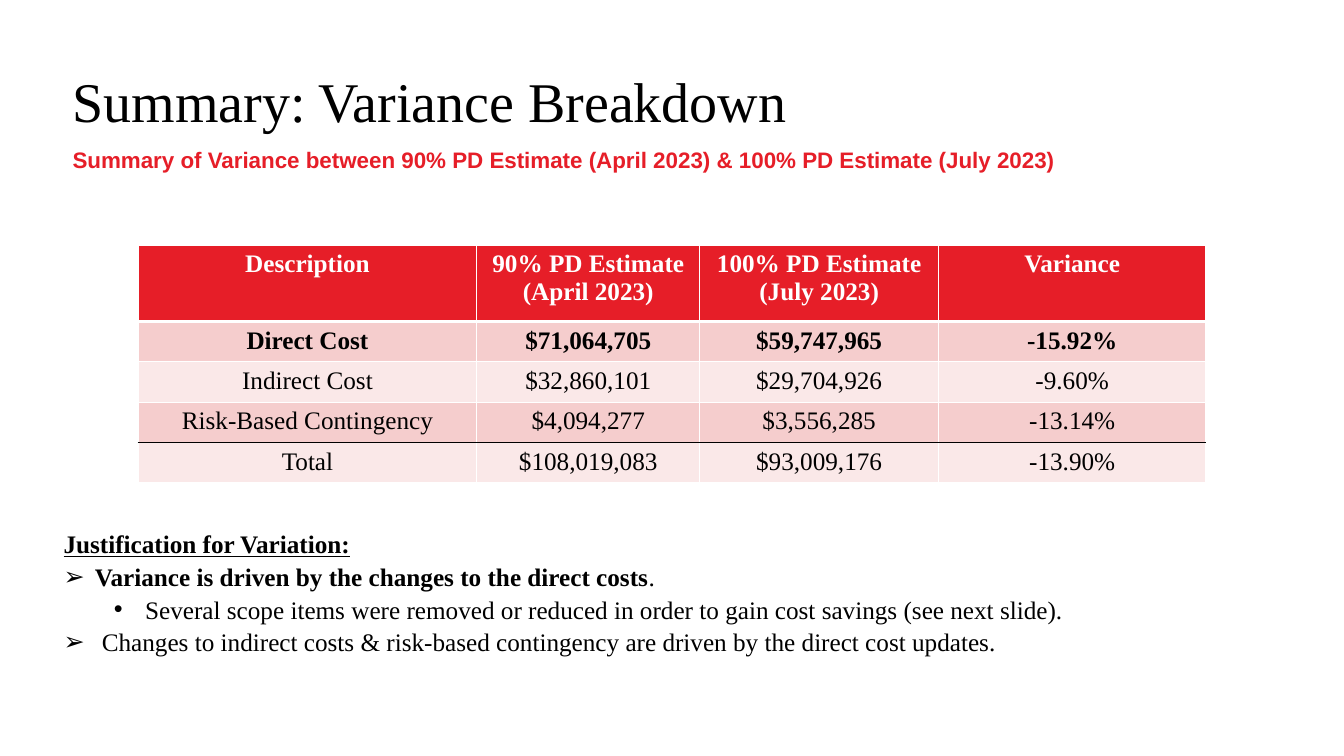
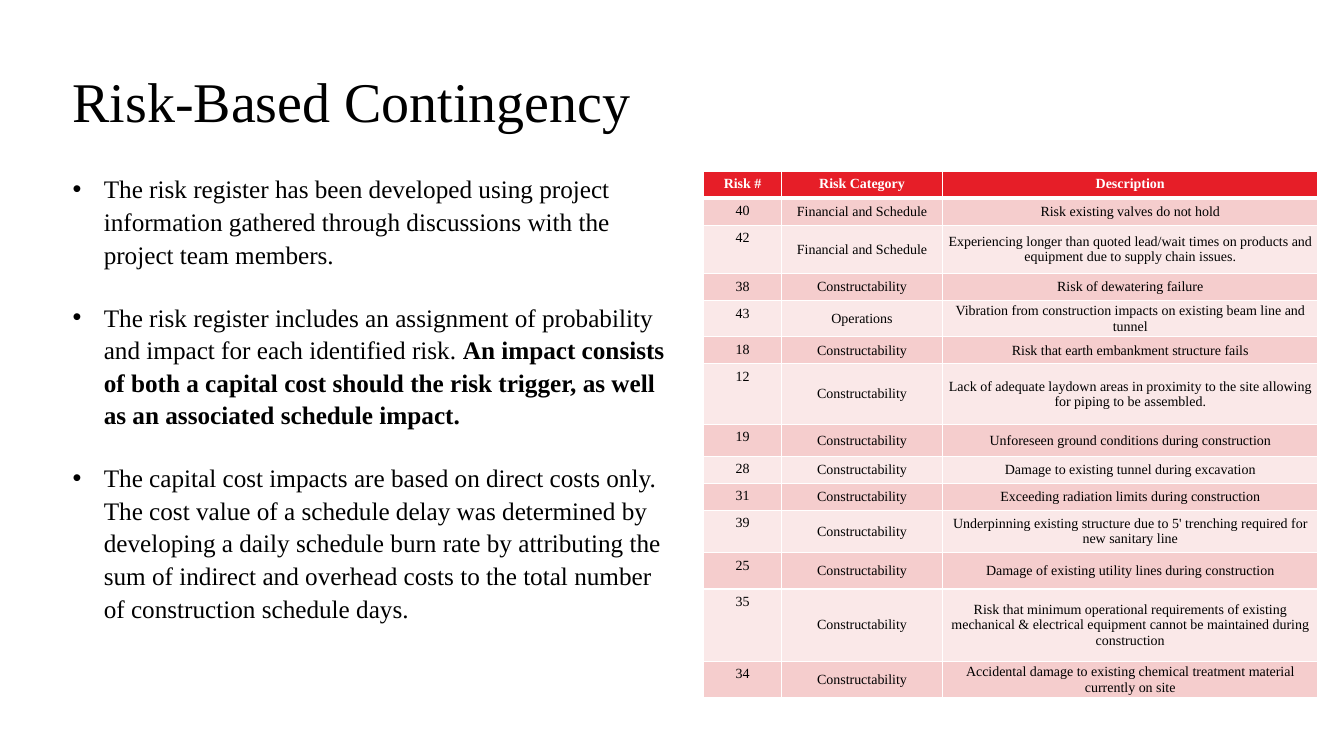
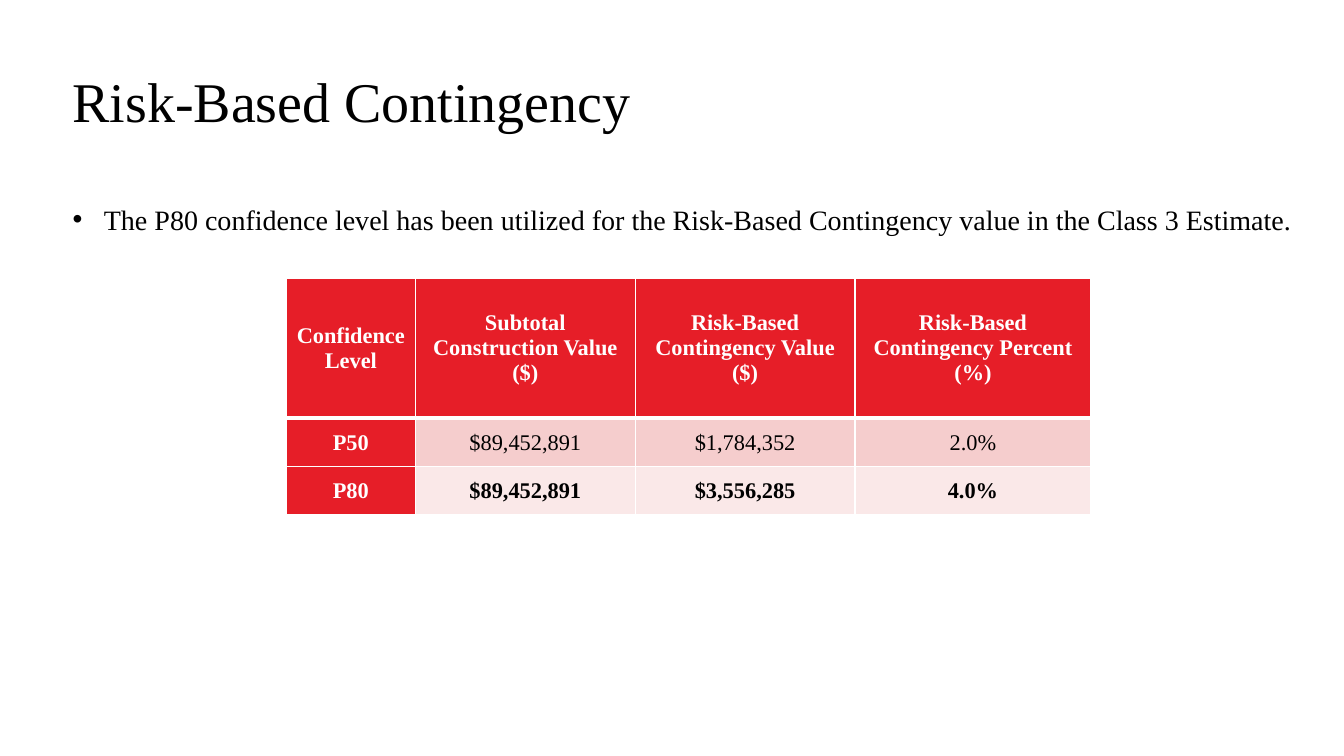
from lxml import etree
from pptx import Presentation
from pptx.dml.color import RGBColor
from pptx.enum.text import MSO_ANCHOR, MSO_AUTO_SIZE, PP_ALIGN
from pptx.oxml.ns import qn
from pptx.util import Pt

PX = 9144  # 100 px to the inch
SERIF, SANS = "Times New Roman", "Arial"
RED, PINK, PALE, WHITE, BLACK = "E61E28", "F5CDCD", "FAE8E8", "FFFFFF", "000000"
LEFT, CENTER = PP_ALIGN.LEFT, PP_ALIGN.CENTER
TOP, MIDDLE = MSO_ANCHOR.TOP, MSO_ANCHOR.MIDDLE
NO_AUTOFIT = MSO_AUTO_SIZE.NONE
TITLES = ["Summary: Variance Breakdown", "Risk-Based Contingency", "Risk-Based Contingency"]
color = RGBColor.from_string


def add_text(slide, box, paragraphs, size, gap=0):
    """Each paragraph is (runs, bullet, text start, hanging indent); a run is (text, bold)."""
    shape = slide.shapes.add_textbox(*[n * PX for n in box])
    frame = shape.text_frame
    frame.word_wrap = True
    frame.margin_left = frame.margin_top = frame.margin_right = frame.margin_bottom = 0
    for index, (runs, bullet, start, hanging) in enumerate(paragraphs):
        paragraph = frame.paragraphs[0] if index == 0 else frame.add_paragraph()
        if bullet:
            properties = paragraph._p.get_or_add_pPr()
            properties.set("marL", str(start * PX))
            properties.set("indent", str(-hanging * PX))
            etree.SubElement(properties, qn("a:buFont"), typeface=SANS)
            etree.SubElement(properties, qn("a:buChar"), char=bullet)
        paragraph.line_spacing = 1.08
        if index and gap:
            paragraph.space_before = Pt(gap)
        paragraph.font.name = SERIF
        paragraph.font.size = Pt(size)
        paragraph.font.color.rgb = color(BLACK)
        for text, bold in runs:
            run = paragraph.add_run()
            run.text = text
            run.font.bold = bold
    return frame


def add_table(slide, left, top, widths, heights, rows, size,
              bold_row=0, header_column=False, ruled_row=None):
    """Add a red-headed banded table; a black line runs above ruled_row."""
    frame = slide.shapes.add_table(len(rows), len(widths), left * PX, top * PX,
                                   sum(widths) * PX, sum(heights) * PX)
    table = frame.table
    for column, width in zip(table.columns, widths):
        column.width = width * PX
    for r, (values, height) in enumerate(zip(rows, heights)):
        table.rows[r].height = height * PX
        top_line = (BLACK if r == ruled_row else WHITE, 3 if r == 1 else 1)
        bottom_line = (BLACK if r + 1 == ruled_row else WHITE, 3 if r == 0 else 1)
        lines = {"a:lnL": (WHITE, 1), "a:lnR": (WHITE, 1),
                 "a:lnT": top_line, "a:lnB": bottom_line}
        for c, value in enumerate(values):
            cell = table.cell(r, c)
            is_header = r == 0 or (header_column and c == 0)
            cell.fill.solid()
            cell.fill.fore_color.rgb = color(RED if is_header else PINK if r % 2 else PALE)
            properties = cell._tc.get_or_add_tcPr()
            for position, (tag, (line_color, points)) in enumerate(lines.items()):
                line = etree.Element(qn(tag), w=str(Pt(points)))
                fill = etree.SubElement(line, qn("a:solidFill"))
                etree.SubElement(fill, qn("a:srgbClr"), val=line_color)
                properties.insert(position, line)
            cell.text_frame.text = value
            for paragraph in cell.text_frame.paragraphs:
                paragraph.alignment = CENTER
                paragraph.font.name = SERIF
                paragraph.font.size = Pt(size)
                paragraph.font.bold = is_header or r == bold_row
                paragraph.font.color.rgb = color(WHITE if is_header else BLACK)
    return table


presentation = Presentation()
presentation.slide_width = 1333 * PX
presentation.slide_height = 750 * PX

slides = []
for text in TITLES:
    slide = presentation.slides.add_slide(presentation.slide_layouts[5])
    title = slide.shapes.title
    title.left, title.top, title.width, title.height = [n * PX for n in (72, 72, 987, 58)]
    frame = title.text_frame
    frame.text = text
    frame.auto_size = NO_AUTOFIT
    frame.vertical_anchor = TOP
    frame.margin_left = frame.margin_top = frame.margin_right = frame.margin_bottom = 0
    paragraph = frame.paragraphs[0]
    paragraph.alignment = LEFT
    paragraph.line_spacing = Pt(44)
    paragraph.font.name = SERIF
    paragraph.font.size = Pt(40)
    paragraph.font.color.rgb = color(BLACK)
    slides.append(slide)
variance_slide, register_slide, confidence_slide = slides

# Variance breakdown
subtitle = add_text(variance_slide, (72, 143, 999, 33), [
    ([("Summary of Variance between 90% PD Estimate (April 2023) & 100% PD Estimate (July 2023)",
       True)], None, 0, 0),
], 16)
subtitle.paragraphs[0].font.name = SANS
subtitle.paragraphs[0].font.color.rgb = color(RED)

justification = add_text(variance_slide, (63, 522, 1199, 151), [
    ([("Justification for Variation:", True)], None, 0, 0),
    ([("Variance is driven by the changes to the direct costs", True), (".", False)],
     "➢", 31, 31),
    ([("Several scope items were removed or reduced in order to gain cost savings "
       "(see next slide).", False)], "•", 81, 31),
    ([("Changes to indirect costs & risk-based contingency are driven by the direct "
       "cost updates.", False)], "➢", 38, 38),
], 18)
justification.paragraphs[0].font.underline = True

add_table(variance_slide, 137, 243, [336, 221, 237, 265], [76] + [40] * 4, [
    ["Description", "90% PD Estimate\v(April 2023)", "100% PD Estimate\v(July 2023)", "Variance"],
    ["Direct Cost", "$71,064,705", "$59,747,965", "-15.92%"],
    ["Indirect Cost", "$32,860,101", "$29,704,926", "-9.60%"],
    ["Risk-Based Contingency", "$4,094,277", "$3,556,285", "-13.14%"],
    ["Total", "$108,019,083", "$93,009,176", "-13.90%"],
], 18, bold_row=1, ruled_row=4)

# Risk register
add_text(register_slide, (72, 170, 596, 476), [
    ([("The risk register has been developed using project information gathered through "
       "discussions with the project team members.", False)], "•", 31, 31),
    ([("The risk register includes an assignment of probability and impact for each "
       "identified risk. ", False),
      ("An impact consists of both a capital cost should the risk trigger, as well as an "
       "associated schedule impact.", True)], "•", 31, 31),
    ([("The capital cost impacts are based on direct costs only. The cost value of a schedule "
       "delay was determined by developing a daily schedule burn rate by attributing the sum of "
       "indirect and overhead costs to the total number of construction schedule days.",
       False)], "•", 31, 31),
], 18, gap=21.6)

FINANCIAL, CONSTRUCTABILITY = "Financial and Schedule", "Constructability"
register_heights = [26, 26, 48, 26, 36, 26, 60, 32, 26, 26, 42, 36, 72, 36]
register = add_table(register_slide, 698, 170, [77, 160, 372], register_heights, [
    ["Risk #", "Risk Category", "Description"],
    ["40", FINANCIAL, "Risk existing valves do not hold"],
    ["42", FINANCIAL, "Experiencing longer than quoted lead/wait times on products and "
                      "equipment due to supply chain issues."],
    ["38", CONSTRUCTABILITY, "Risk of dewatering failure"],
    ["43", "Operations", "Vibration from construction impacts on existing beam line and tunnel"],
    ["18", CONSTRUCTABILITY, "Risk that earth embankment structure fails"],
    ["12", CONSTRUCTABILITY, "Lack of adequate laydown areas in proximity to the site allowing "
                             "for piping to be assembled."],
    ["19", CONSTRUCTABILITY, "Unforeseen ground conditions during construction"],
    ["28", CONSTRUCTABILITY, "Damage to existing tunnel during excavation"],
    ["31", CONSTRUCTABILITY, "Exceeding radiation limits during construction"],
    ["39", CONSTRUCTABILITY, "Underpinning existing structure due to 5' trenching required for "
                             "new sanitary line"],
    ["25", CONSTRUCTABILITY, "Damage of existing utility lines during construction"],
    ["35", CONSTRUCTABILITY, "Risk that minimum operational requirements of existing mechanical "
                             "& electrical equipment cannot be maintained during construction"],
    ["34", CONSTRUCTABILITY, "Accidental damage to existing chemical treatment material "
                             "currently on site"],
], 10)

# Confidence levels
add_text(confidence_slide, (72, 198, 1221, 448), [
    ([("The P80 confidence level has been utilized for the Risk-Based Contingency value in the "
       "Class 3 Estimate.", False)], "•", 31, 31),
], 20)
confidence = add_table(confidence_slide, 284, 276, [128, 218, 218, 234], [139, 48, 48], [
    ["Confidence Level", "Subtotal Construction Value\n($)",
     "Risk-Based Contingency Value\n($)", "Risk-Based Contingency Percent\n(%)"],
    ["P50", "$89,452,891", "$1,784,352", "2.0%"],
    ["P80", "$89,452,891", "$3,556,285", "4.0%"],
], 16, bold_row=2, header_column=True)

# Vertically centred cells and their margins
for table, first, margin in [(register, 1, 0), (confidence, 0, 5)]:
    for row in list(table.rows)[first:]:
        for cell in list(row.cells)[first:]:
            cell.vertical_anchor = MIDDLE
            cell.margin_left = cell.margin_right = margin * PX
            cell.margin_top = cell.margin_bottom = margin * PX

presentation.save("out.pptx")
